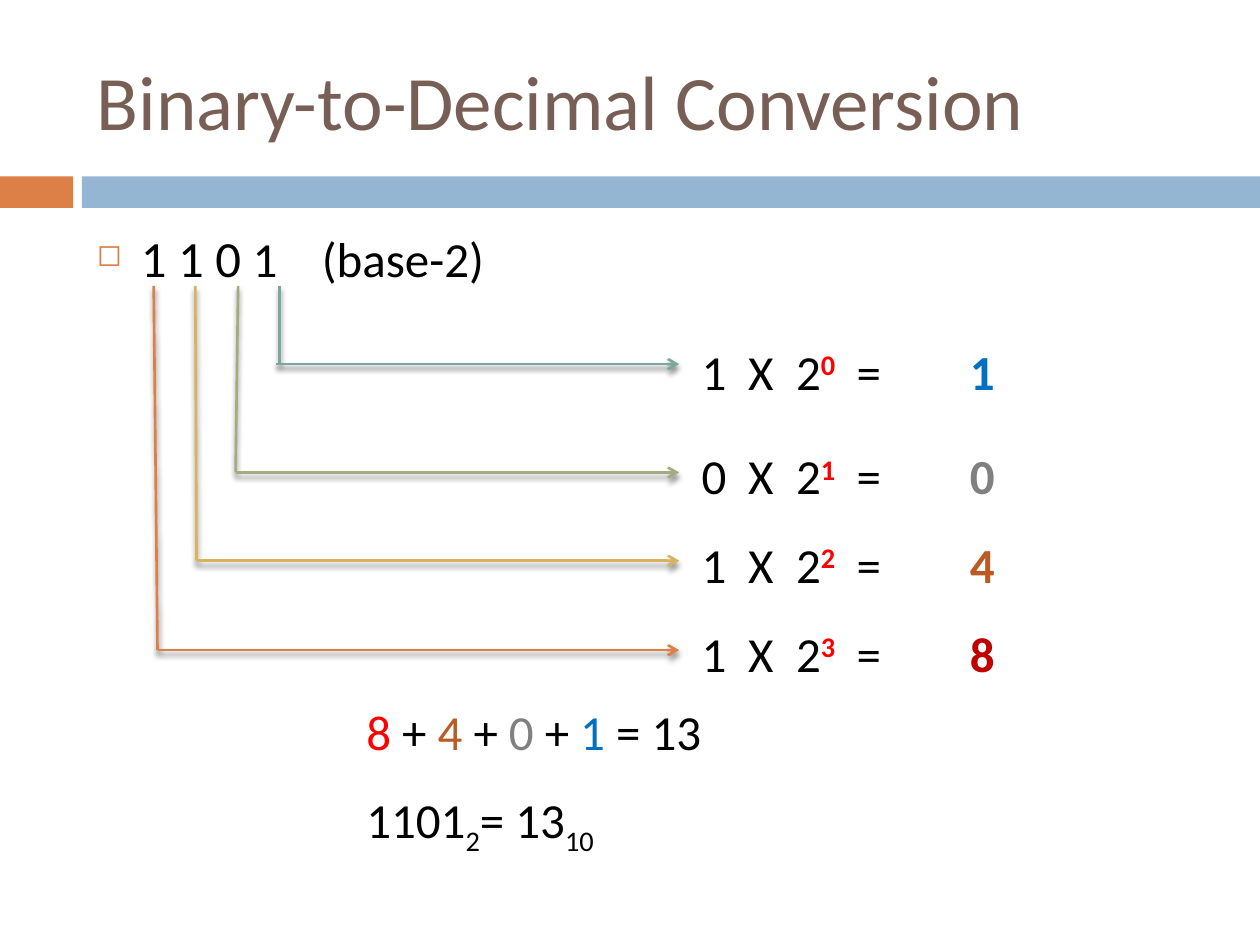
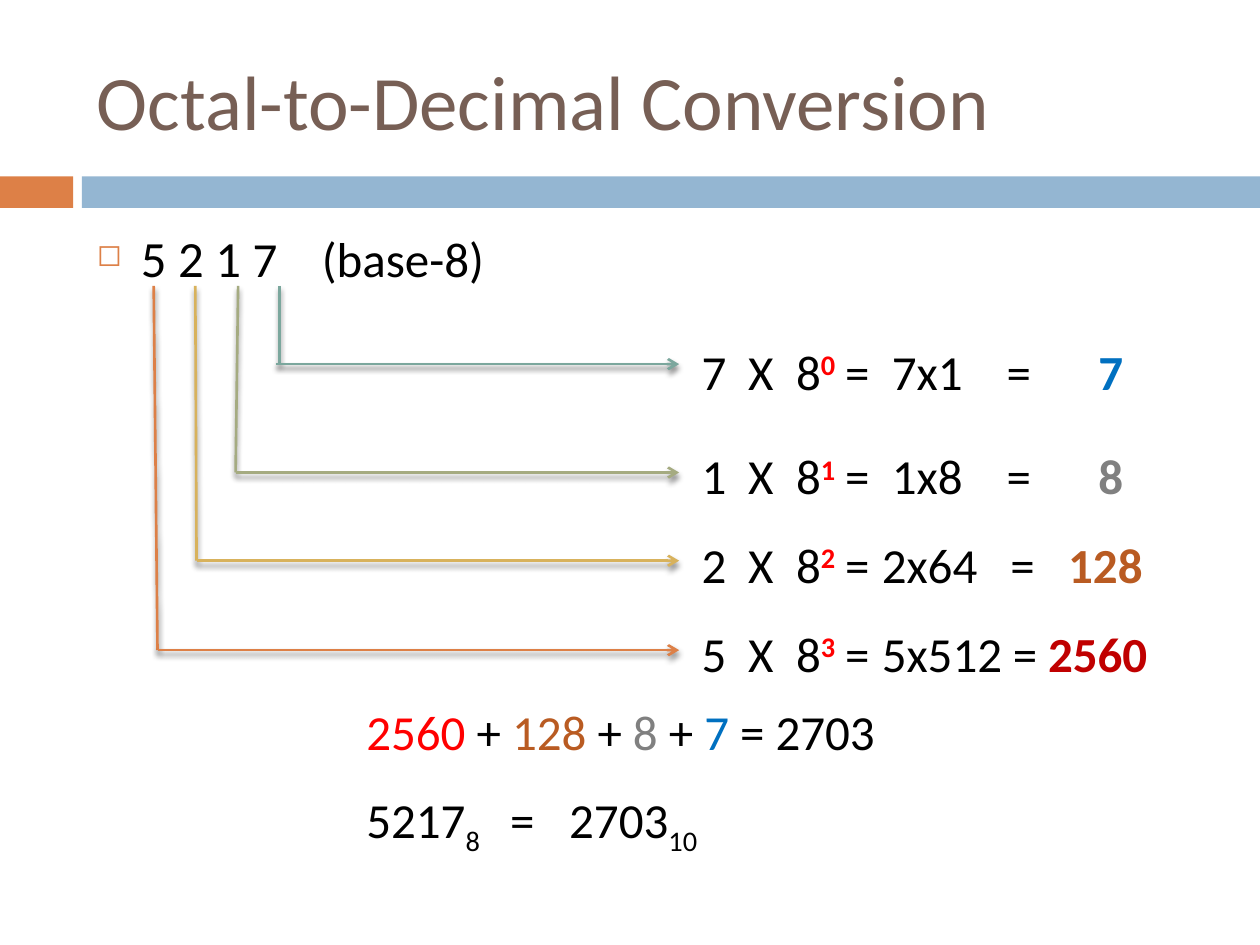
"""Build two slides that convert binary and octal numbers to decimal."""
from dataclasses import dataclass

from lxml.etree import SubElement
from pptx import Presentation
from pptx.dml.color import RGBColor
from pptx.enum.shapes import MSO_CONNECTOR, MSO_SHAPE
from pptx.enum.text import MSO_ANCHOR, MSO_AUTO_SIZE
from pptx.oxml.ns import qn
from pptx.util import Inches, Pt

CONVERSIONS = [
    {
        "title": "Binary-to-Decimal Conversion",
        "digits": "1101",
        "base": "2",
        "products": [
            [("=", 1.23), ("1", 2.13)],
            [("=", 1.23), ("0", 2.13)],
            [("=", 1.23), ("4", 2.13)],
            [("=", 1.23), ("8", 2.13)],
        ],
        "total": "13",
        "answer_equals": "= ",
        "answer_stops": [],
    },
    {
        "title": "Octal-to-Decimal Conversion",
        "digits": "5217",
        "base": "8",
        "products": [
            [("=", 1.14), ("7x1", 1.51), ("=", 2.42), ("7", 3.15)],
            [("=", 1.14), ("1x8", 1.51), ("=", 2.42), ("8", 3.15)],
            [("=", 1.14), ("2x64", 1.43), ("=", 2.45), ("128", 2.91)],
            [("=", 1.14), ("5x512", 1.43), ("=", 2.47), ("2560", 2.75)],
        ],
        "total": "2703",
        "answer_equals": "\t=\t",
        "answer_stops": [1.14, 1.61],
    },
]


@dataclass(frozen=True)
class Theme:
    font: str = "Calibri"
    title: str = "775F55"
    text: str = "000000"
    accent: str = "DD8047"
    band: str = "94B6D2"
    power: str = "FF0000"
    branches: tuple = ("7BA79D", "A5AB81", "D8B25C", "DD8047")
    results: tuple = ("0070C0", "808080", "B95B22", "C00000")
    terms: tuple = ("0070C0", "808080", "B95B22", "FF0000")
    title_size: int = 44
    digit_size: int = 29
    text_size: int = 28
    line_width: float = 1.5


THEME = Theme()
BANDS = [(0, 0.58, THEME.accent), (0.65, 9.35, THEME.band)]
BRANCH_TOP, ARROW_END = 2.27, 5.39
BRANCHES = [
    {"top_x": 2.22, "foot_x": 2.22, "arrow_x": 2.19, "y": 2.89, "label_y": 2.66},
    {"top_x": 1.89, "foot_x": 1.87, "arrow_x": 1.87, "y": 3.75, "label_y": 3.49},
    {"top_x": 1.55, "foot_x": 1.56, "arrow_x": 1.56, "y": 4.45, "label_y": 4.19},
    {"top_x": 1.22, "foot_x": 1.25, "arrow_x": 1.25, "y": 5.16, "label_y": 4.9},
]
FACTOR_STOPS = [0.37, 0.75]


def rgb(color):
    return RGBColor.from_string(color)


def add_run(paragraph, text, color=THEME.text, size=THEME.text_size, bold=False, baseline=0, spacing=0):
    run = paragraph.add_run()
    run.text = text
    run.font.name = THEME.font
    run.font.size = Pt(size)
    run.font.bold = bold
    run.font.color.rgb = rgb(color)
    properties = run.font._element
    if baseline:
        properties.set("baseline", str(baseline * 1000))
    if spacing:
        properties.set("spc", str(spacing * 100))


def add_paragraph_box(slide, left, top, width, height, stops=(), grow=False):
    frame = slide.shapes.add_textbox(*map(Inches, (left, top, width, height))).text_frame
    frame.word_wrap = True
    if grow:
        frame.auto_size = MSO_AUTO_SIZE.SHAPE_TO_FIT_TEXT
    paragraph = frame.paragraphs[0]
    if stops:
        tabs = SubElement(paragraph._p.get_or_add_pPr(), qn("a:tabLst"))
        for stop in stops:
            SubElement(tabs, qn("a:tab"), pos=str(Inches(stop)), algn="l")
    return frame, paragraph


def add_bands(slide):
    for left, width, color in BANDS:
        band = slide.shapes.add_shape(
            MSO_SHAPE.RECTANGLE, Inches(left), Inches(1.4), Inches(width), Inches(0.25))
        band.shadow.inherit = False
        band.fill.solid()
        band.fill.fore_color.rgb = rgb(color)
        band.line.fill.background()


def add_title(slide, title):
    frame, paragraph = add_paragraph_box(slide, 0.67, 0.25, 8.92, 1.08)
    frame.vertical_anchor = MSO_ANCHOR.MIDDLE
    add_run(paragraph, title, THEME.title, THEME.title_size)


def add_number(slide, digits, base):
    _, paragraph = add_paragraph_box(slide, 0.67, 1.75, 8.92, 4.92)
    paragraph.space_before = Pt(7)
    properties = paragraph._p.get_or_add_pPr()
    properties.set("marL", str(Inches(0.35)))
    properties.set("indent", str(-Inches(0.35)))
    bullet_color = SubElement(properties, qn("a:buClr"))
    SubElement(bullet_color, qn("a:srgbClr"), val=THEME.accent)
    SubElement(properties, qn("a:buSzPct"), val="60000")
    SubElement(properties, qn("a:buChar"), char="◻")
    add_run(paragraph, " ".join(digits[:-1]) + " ", size=THEME.digit_size)
    add_run(paragraph, digits[-1])
    add_run(paragraph, " ", spacing=19)
    add_run(paragraph, f"(base-{base})")


def add_branch_line(slide, start, end, color, arrow=False):
    connector = slide.shapes.add_connector(MSO_CONNECTOR.STRAIGHT, *map(Inches, start + end))
    connector.line.color.rgb = rgb(color)
    connector.line.width = Pt(THEME.line_width)
    if arrow:
        SubElement(connector.line._get_or_add_ln(), qn("a:tailEnd"), type="arrow")
    effects = SubElement(connector._element.spPr, qn("a:effectLst"))
    shadow = SubElement(
        effects, qn("a:outerShdw"), blurRad=str(Pt(3)), dist=str(Pt(2.4)),
        dir="5400000", rotWithShape="0")
    shade = SubElement(shadow, qn("a:srgbClr"), val="000000")
    SubElement(shade, qn("a:alpha"), val="45000")


def add_product(slide, top, digit, base, power, product):
    stops = FACTOR_STOPS + [stop for _, stop in product]
    _, paragraph = add_paragraph_box(slide, 5.47, top, 4.3, 0.57, stops, grow=True)
    *steps, (result, _) = product
    add_run(paragraph, f"{digit}\tX\t{base}")
    add_run(paragraph, str(power), THEME.power, bold=True, baseline=30)
    add_run(paragraph, "".join(f"\t{step}" for step, _ in steps) + "\t")
    add_run(paragraph, result, THEME.results[power], bold=True)


def add_sum(slide, products, total):
    _, paragraph = add_paragraph_box(slide, 2.81, 5.52, 5.86, 0.57, grow=True)
    for power in reversed(range(len(products))):
        add_run(paragraph, products[power][-1][0], THEME.terms[power])
        add_run(paragraph, " + " if power else f" = {total}")


def add_answer(slide, conversion):
    _, paragraph = add_paragraph_box(
        slide, 2.81, 6.22, 5.86, 0.57, conversion["answer_stops"], grow=True)
    add_run(paragraph, conversion["digits"])
    add_run(paragraph, conversion["base"], baseline=-25)
    add_run(paragraph, conversion["answer_equals"] + conversion["total"])
    add_run(paragraph, "10", baseline=-25)


def add_conversion(presentation, conversion):
    slide = presentation.slides.add_slide(presentation.slide_layouts[6])
    digits, base, products = (conversion[key] for key in ("digits", "base", "products"))
    add_bands(slide)
    add_title(slide, conversion["title"])
    add_number(slide, digits, base)
    for branch, color in zip(BRANCHES, THEME.branches):
        add_branch_line(
            slide, (branch["top_x"], BRANCH_TOP), (branch["foot_x"], branch["y"]), color)
    for power, (branch, color) in enumerate(zip(BRANCHES, THEME.branches)):
        add_branch_line(
            slide, (branch["arrow_x"], branch["y"]), (ARROW_END, branch["y"]), color, arrow=True)
        add_product(slide, branch["label_y"], digits[-1 - power], base, power, products[power])
    add_sum(slide, products, conversion["total"])
    add_answer(slide, conversion)


def main():
    presentation = Presentation()
    presentation.slide_width, presentation.slide_height = Inches(10), Inches(7.5)
    for conversion in CONVERSIONS:
        add_conversion(presentation, conversion)
    presentation.save("out.pptx")


if __name__ == "__main__":
    main()
